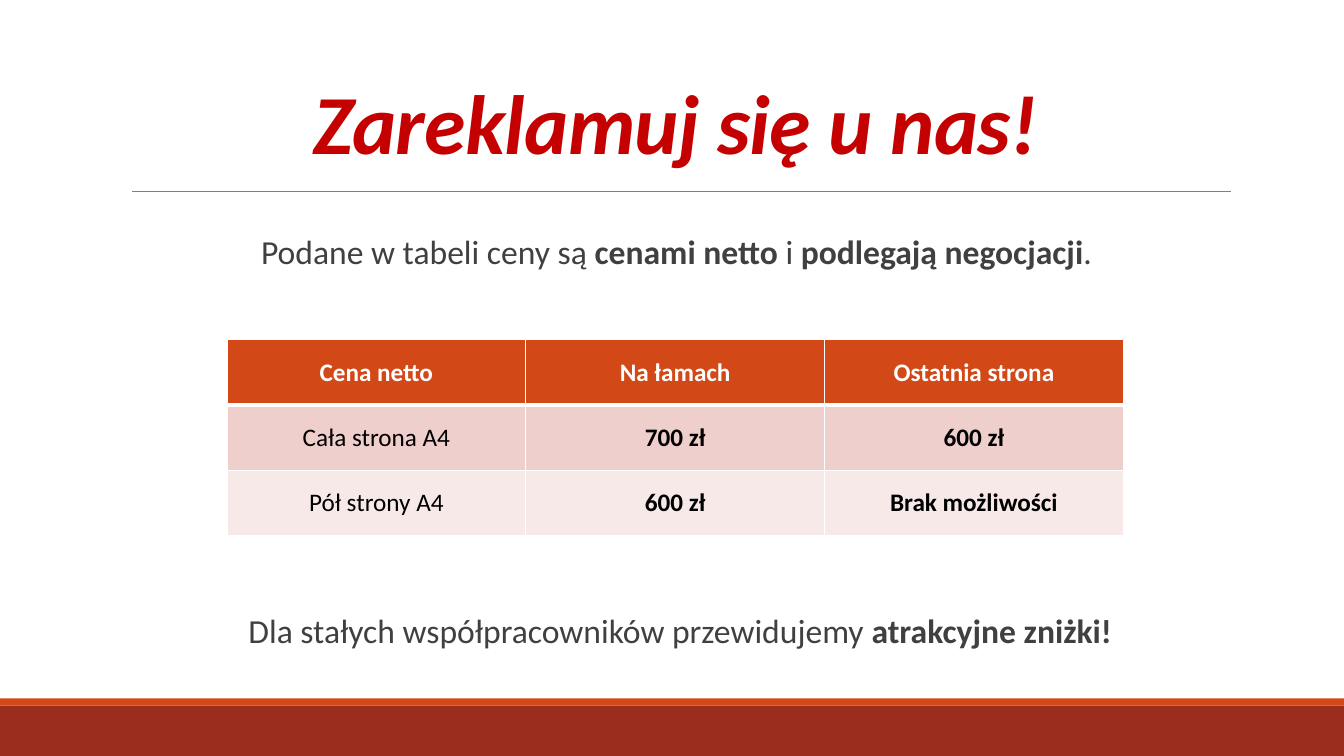
"""Build the advertising price slide."""
from dataclasses import dataclass

from lxml.etree import SubElement
from pptx import Presentation
from pptx.dml.color import RGBColor
from pptx.enum.shapes import MSO_CONNECTOR, MSO_SHAPE
from pptx.enum.text import MSO_ANCHOR, PP_ALIGN
from pptx.oxml import parse_xml
from pptx.oxml.ns import nsdecls, qn
from pptx.util import Cm, Pt


@dataclass(frozen=True)
class Theme:
    """Colours, font and type sizes of the slide."""
    font: str = "Calibri"
    title: str = "C40000"
    text: str = "404040"
    rule: str = "808080"
    band: str = "9B2D1F"
    accent: str = "D34817"
    white: str = "FFFFFF"
    black: str = "000000"
    rows: tuple = ("EFCFCC", "F7E9E8")
    title_size: int = 60
    note_size: int = 24
    cell_size: int = 18


THEME = Theme()
PRICES = [
    ("Cena netto", "Na łamach", "Ostatnia strona"),
    ("Cała strona A4", "700 zł", "600 zł"),
    ("Pół strony A4", "600 zł", "Brak możliwości"),
]


def rgb(color):
    """Turn a hex string into a colour."""
    return RGBColor.from_string(color)


def add_run(p, text, size, color, bold=False, italic=False):
    """Add one formatted run to a paragraph and return it."""
    r = p.add_run()
    r.text = text
    r.font.name = THEME.font
    r.font.size = Pt(size)
    r.font.color.rgb = rgb(color)
    r.font.bold = bold
    r.font.italic = italic
    return r


def add_band(s, top, height, color):
    """Add a full-width band."""
    sp = s.shapes.add_shape(MSO_SHAPE.RECTANGLE, 0, Cm(top), Cm(33.87), Cm(height))
    sp.shadow.inherit = False
    sp.fill.solid()
    sp.fill.fore_color.rgb = rgb(color)
    sp.line.fill.background()


def add_rule(s, left, right, y):
    """Add the thin line under the title."""
    line = s.shapes.add_connector(MSO_CONNECTOR.STRAIGHT, Cm(left), Cm(y), Cm(right), Cm(y))
    line.line.color.rgb = rgb(THEME.rule)
    line.line.width = Pt(0.5)
    SubElement(line._element.spPr, qn("a:effectLst"))


def set_title(s, text):
    """Place and format the title."""
    sp = s.shapes.title
    sp.left, sp.top, sp.width, sp.height = Cm(3.05), Cm(0.79), Cm(27.94), Cm(3.66)
    tf = sp.text_frame
    tf.vertical_anchor = MSO_ANCHOR.BOTTOM
    p = tf.paragraphs[0]
    p.alignment = PP_ALIGN.CENTER
    p.line_spacing = 0.85
    r = add_run(p, text, THEME.title_size, THEME.title, bold=True, italic=True)
    r.font._element.set("spc", "-50")


def add_note(s, top, parts):
    """Add a centred line of text from (text, bold) parts."""
    tf = s.shapes.add_textbox(Cm(3.05), Cm(top), Cm(27.94), Cm(1.12)).text_frame
    tf.word_wrap = True
    tf.margin_left = tf.margin_right = 0
    p = tf.paragraphs[0]
    p.alignment = PP_ALIGN.CENTER
    p.line_spacing = 0.9
    p._p.get_or_add_pPr().set("marL", str(Cm(0.25)))
    for text, bold in parts:
        add_run(p, text, THEME.note_size, THEME.text, bold)


def set_borders(cell, widths):
    """Give a cell white borders, with widths in points by side."""
    tcPr = cell._tc.get_or_add_tcPr()
    for i, (side, width) in enumerate(widths.items()):
        tcPr.insert(i, parse_xml(
            f'<a:ln{side} {nsdecls("a")} w="{Pt(width)}"><a:solidFill>'
            f'<a:srgbClr val="{THEME.white}"/></a:solidFill></a:ln{side}>'))


def add_prices(s, rows):
    """Add the price table."""
    n_rows, n_cols = len(rows), len(rows[0])
    table = s.shapes.add_table(n_rows, n_cols, Cm(5.72), Cm(8.56),
                               Cm(7.53 * n_cols), Cm(1.65 * n_rows)).table
    for i, row in enumerate(rows):
        header = i == 0
        for j, text in enumerate(row):
            cell = table.cell(i, j)
            cell.vertical_anchor = MSO_ANCHOR.MIDDLE
            cell.fill.solid()
            cell.fill.fore_color.rgb = rgb(THEME.accent if header else THEME.rows[i - 1])
            set_borders(cell, {"L": 1, "R": 1, "T": 3 if i == 1 else 1, "B": 3 if header else 1})
            p = cell.text_frame.paragraphs[0]
            p.alignment = PP_ALIGN.CENTER
            add_run(p, text, THEME.cell_size, THEME.white if header else THEME.black,
                    bold=header or j > 0)


def main():
    """Build and save the slide."""
    prs = Presentation()
    prs.slide_width, prs.slide_height = Cm(33.87), Cm(19.05)
    s = prs.slides.add_slide(prs.slide_layouts[5])
    add_band(s, 17.78, 1.27, THEME.band)
    add_band(s, 17.6, 0.18, THEME.accent)
    add_rule(s, 3.33, 31.01, 4.83)
    set_title(s, "Zareklamuj się u nas!")
    add_note(s, 5.82, [("Podane w tabeli ceny są", False), (" cenami netto", True),
                       (" i ", False), ("podlegają negocjacji", True), (". ", False)])
    add_note(s, 15.37, [("Dla stałych współpracowników przewidujemy ", False),
                        ("atrakcyjne zniżki!", True)])
    add_prices(s, PRICES)
    prs.save("out.pptx")


if __name__ == "__main__":
    main()
